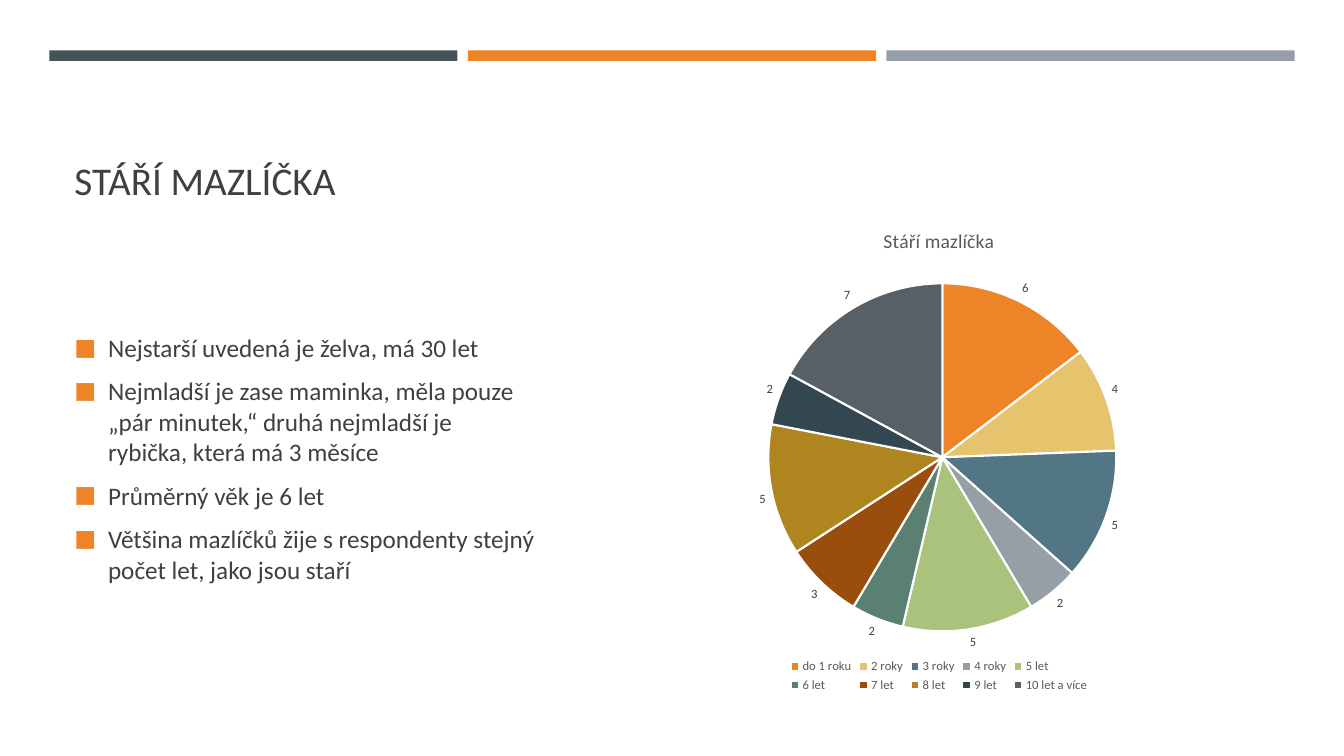
"""Builds a slide on the age of pets with bullet points and a pie chart."""
from lxml import etree
from pptx import Presentation
from pptx.chart.data import CategoryChartData
from pptx.dml.color import RGBColor
from pptx.enum.chart import XL_CHART_TYPE as ChartType
from pptx.enum.chart import XL_LABEL_POSITION as LabelPosition
from pptx.enum.chart import XL_LEGEND_POSITION as LegendPosition
from pptx.enum.shapes import MSO_SHAPE as Shape
from pptx.enum.text import MSO_ANCHOR as Anchor
from pptx.oxml import parse_xml
from pptx.oxml.ns import nsdecls, qn
from pptx.util import Pt

TITLE = "STÁŘÍ MAZLÍČKA"
POINTS = [
    "Nejstarší uvedená je želva, má 30 let",
    "Nejmladší je zase maminka, měla pouze „pár minutek,“ druhá nejmladší je rybička, která má 3 měsíce",
    "Průměrný věk je 6 let",
    "Většina mazlíčků žije s respondenty stejný počet let, jako jsou staří",
]
CHART_TITLE = "Stáří mazlíčka"
AGES = [
    ("do 1 roku", 6, "ED8428"),
    ("2 roky", 4, "E6C46D"),
    ("3 roky", 5, "537685"),
    ("4 roky", 2, "969FA7"),
    ("5 let", 5, "A9C37C"),
    ("6 let", 2, "5A8071"),
    ("7 let", 3, "994E0D"),
    ("8 let", 5, "AE851E"),
    ("9 let", 2, "324750"),
    ("10 let a více", 7, "576067"),
]
THEME = {
    "font": "Calibri", "text": "404040", "muted": "595959", "accent": "ED8428",
    "white": "FFFFFF", "bars": ["465359", "ED8428", "969FA7"],
    "title": 28, "body": 18, "chart_title": 14, "small": 9,
}
PIE_LAYOUT = {"x": 0.25, "y": 0.15, "w": 0.51, "h": 0.72}
MARGIN = 46.1
BAR_LEFT, BAR_TOP, BAR_WIDTH, BAR_HEIGHT, BAR_STEP = 35.2, 36, 291.6, 7.5, 299


def color(value):
    return RGBColor.from_string(value)


def style(font, size, tint):
    font.name = THEME["font"]
    font.size = Pt(size)
    font.bold = False
    font.color.rgb = color(tint)


def add_bullet(para):
    properties = para._p.get_or_add_pPr()
    properties.set("marL", str(Pt(24)))
    properties.set("indent", str(-Pt(24)))
    tint = etree.SubElement(properties, qn("a:buClr"))
    etree.SubElement(tint, qn("a:srgbClr"), val=THEME["accent"])
    etree.SubElement(properties, qn("a:buSzPct"), val="92000")
    etree.SubElement(properties, qn("a:buFont"), typeface=THEME["font"])
    etree.SubElement(properties, qn("a:buChar"), char="■")


def add_text(page, lines, left, top, width, height, size, anchor, bullets=False):
    box = page.shapes.add_textbox(Pt(left), Pt(top), Pt(width), Pt(height))
    frame = box.text_frame
    frame.word_wrap = True
    frame.vertical_anchor = anchor
    for index, line in enumerate(lines):
        para = frame.paragraphs[0] if index == 0 else frame.add_paragraph()
        span = para.add_run()
        span.text = line
        style(span.font, size, THEME["text"])
        if bullets:
            para.space_before = Pt(size * 0.2)
            para.space_after = Pt(6)
            add_bullet(para)


def add_bars(page):
    for index, tint in enumerate(THEME["bars"]):
        bar = page.shapes.add_shape(
            Shape.RECTANGLE, Pt(BAR_LEFT + index * BAR_STEP), Pt(BAR_TOP),
            Pt(BAR_WIDTH), Pt(BAR_HEIGHT))
        bar.shadow.inherit = False
        bar.fill.solid()
        bar.fill.fore_color.rgb = color(tint)
        bar.line.fill.background()


def place_pie(chart):
    plot_area = chart._chartSpace.chart.plotArea
    for old in plot_area.findall(qn("c:layout")):
        plot_area.remove(old)
    sizes = "".join(f'<c:{key} val="{value}"/>' for key, value in PIE_LAYOUT.items())
    plot_area.insert(0, parse_xml(
        f'<c:layout {nsdecls("c")}><c:manualLayout><c:layoutTarget val="inner"/>'
        f'<c:xMode val="edge"/><c:yMode val="edge"/>{sizes}</c:manualLayout></c:layout>'))


def add_pie(page):
    data = CategoryChartData()
    data.categories = [name for name, _, _ in AGES]
    data.add_series(CHART_TITLE, [count for _, count, _ in AGES])
    chart = page.shapes.add_chart(
        ChartType.PIE, Pt(427), Pt(149), Pt(487.4), Pt(348.5), data).chart
    style(chart.font, THEME["small"], THEME["muted"])
    chart.has_title = True
    chart.chart_title.include_in_layout = False
    para = chart.chart_title.text_frame.paragraphs[0]
    span = para.add_run()
    span.text = CHART_TITLE
    style(span.font, THEME["chart_title"], THEME["muted"])
    chart.has_legend = True
    chart.legend.position = LegendPosition.BOTTOM
    chart.legend.include_in_layout = False
    style(chart.legend.font, THEME["small"], THEME["muted"])
    plot = chart.plots[0]
    plot.vary_by_categories = True
    plot.has_data_labels = True
    labels = plot.data_labels
    labels.show_value = True
    labels.show_percentage = False
    labels.position = LabelPosition.OUTSIDE_END
    style(labels.font, THEME["small"], THEME["text"])
    for index, (_, _, tint) in enumerate(AGES):
        shape = plot.series[0].points[index].format
        shape.fill.solid()
        shape.fill.fore_color.rgb = color(tint)
        shape.line.color.rgb = color(THEME["white"])
        shape.line.width = Pt(1.5)
    place_pie(chart)


def main():
    deck = Presentation()
    deck.slide_width, deck.slide_height = Pt(960), Pt(540)
    page = deck.slides.add_slide(deck.slide_layouts[6])
    add_bars(page)
    add_text(page, [TITLE], MARGIN, 55.4, 868.3, 93.6, THEME["title"], Anchor.BOTTOM)
    add_text(page, POINTS, MARGIN, 184.3, 342.7, 285.8, THEME["body"], Anchor.MIDDLE,
             bullets=True)
    add_pie(page)
    deck.save("out.pptx")


if __name__ == "__main__":
    main()
